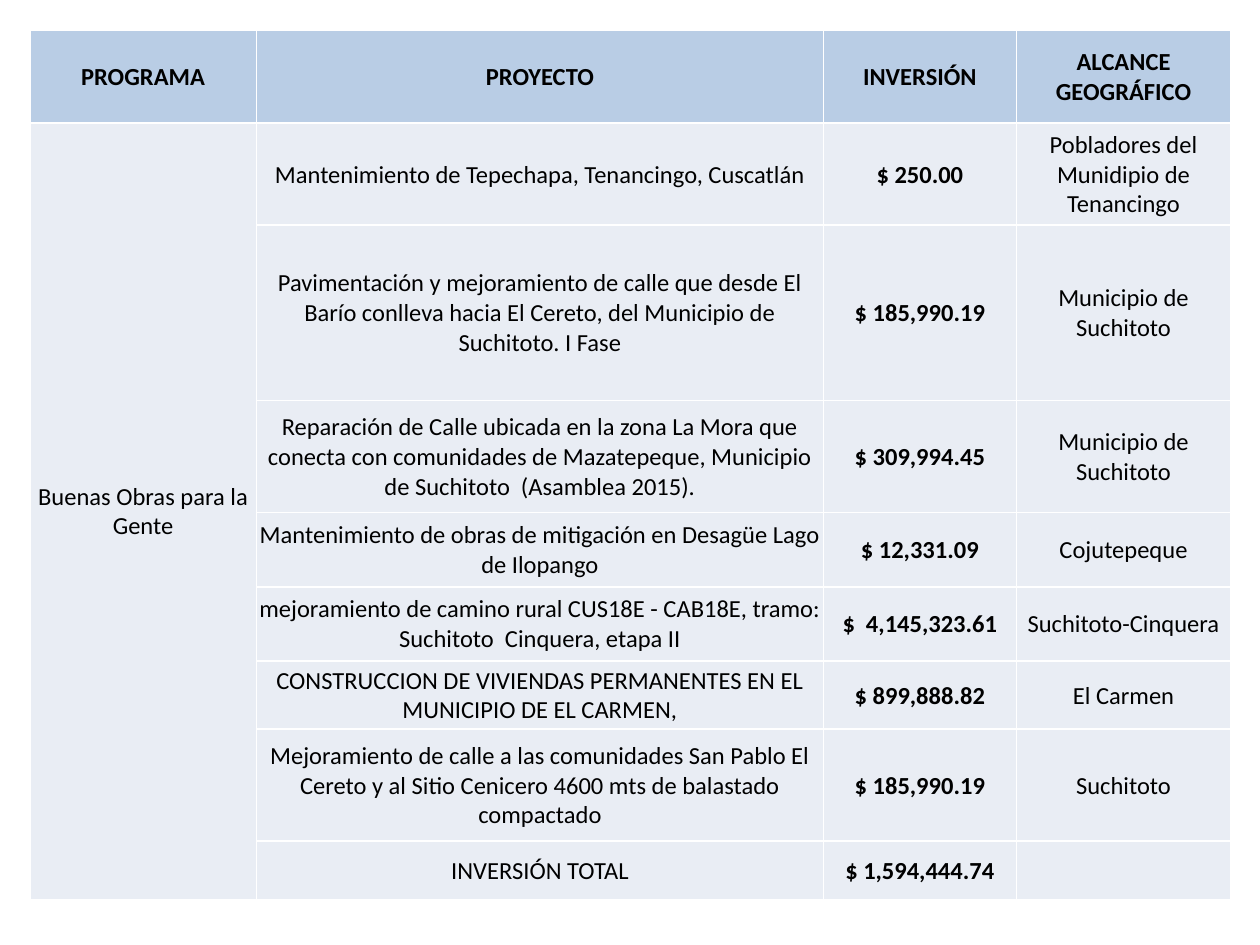
import pptx
import pptx.dml.color
import pptx.enum.text
import pptx.util
from lxml import etree
from pptx.util import Cm

HEADER_BLUE = pptx.dml.color.RGBColor(0xB9, 0xCD, 0xE5)
BODY_GREY = pptx.dml.color.RGBColor(0xE9, 0xED, 0xF4)
BLACK = pptx.dml.color.RGBColor(0, 0, 0)
WHITE = pptx.dml.color.RGBColor(0xFF, 0xFF, 0xFF)
DRAWING_NS = "{http://schemas.openxmlformats.org/drawingml/2006/main}"

HEADINGS = ["PROGRAMA", "PROYECTO", "INVERSIÓN", "ALCANCE GEOGRÁFICO"]
PROGRAM = "Buenas Obras para la Gente"
PROJECTS = [
    ("Mantenimiento de Tepechapa, Tenancingo, Cuscatlán",
     "$ 250.00", "Pobladores del Munidipio de Tenancingo"),
    ("Pavimentación y mejoramiento de calle que desde El Barío conlleva "
     "hacia El Cereto, del Municipio de Suchitoto. I Fase",
     "$ 185,990.19", "Municipio de Suchitoto"),
    ("Reparación de Calle ubicada en la zona La Mora que conecta con "
     "comunidades de Mazatepeque, Municipio de Suchitoto  (Asamblea 2015).",
     "$ 309,994.45", "Municipio de Suchitoto"),
    ("Mantenimiento de obras de mitigación en Desagüe Lago de Ilopango",
     "$ 12,331.09", "Cojutepeque"),
    ("mejoramiento de camino rural CUS18E - CAB18E, tramo: "
     "Suchitoto  Cinquera, etapa II",
     "$  4,145,323.61", "Suchitoto-Cinquera"),
    ("CONSTRUCCION DE VIVIENDAS PERMANENTES EN EL MUNICIPIO DE EL CARMEN,",
     "$ 899,888.82", "El Carmen"),
    ("Mejoramiento de calle a las comunidades San Pablo El Cereto y al "
     "Sitio Cenicero 4600 mts de balastado compactado",
     "$ 185,990.19", "Suchitoto"),
    ("INVERSIÓN TOTAL", "$ 1,594,444.74", ""),
]
COLUMN_WIDTHS = [4.57, 11.43, 3.89, 4.32]
ROW_HEIGHTS = [1.88, 2.06, 3.53, 2.26, 1.5, 1.5, 1.37, 2.26, 1.17]
INVESTMENT_COLUMN = HEADINGS.index("INVERSIÓN")


def add_borders(cell):
    properties = cell._tc.get_or_add_tcPr()
    for side in ("lnL", "lnR", "lnT", "lnB"):
        line = etree.SubElement(properties, DRAWING_NS + side, w=str(pptx.util.Pt(1)))
        fill = etree.SubElement(line, DRAWING_NS + "solidFill")
        etree.SubElement(fill, DRAWING_NS + "srgbClr", val=str(WHITE))


presentation = pptx.Presentation()
presentation.slide_width = Cm(25.4)
presentation.slide_height = Cm(19.05)
slide = presentation.slides.add_slide(presentation.slide_layouts[6])

investments = slide.shapes.add_table(
    len(ROW_HEIGHTS), len(COLUMN_WIDTHS), Cm(0.6), Cm(0.6),
    Cm(sum(COLUMN_WIDTHS)), Cm(sum(ROW_HEIGHTS))).table
investments.first_row = False
investments.horz_banding = False
for column, width in zip(investments.columns, COLUMN_WIDTHS):
    column.width = Cm(width)
for row, height in zip(investments.rows, ROW_HEIGHTS):
    row.height = Cm(height)

contents = [HEADINGS] + [("", *project) for project in PROJECTS]
contents[1] = (PROGRAM, *PROJECTS[0])
for row_number, texts in enumerate(contents):
    is_header = row_number == 0
    for column_number, text in enumerate(texts):
        cell = investments.cell(row_number, column_number)
        add_borders(cell)
        cell.fill.solid()
        cell.fill.fore_color.rgb = HEADER_BLUE if is_header else BODY_GREY
        cell.margin_left = cell.margin_top = cell.margin_right = Cm(0.02)
        cell.margin_bottom = 0
        cell.vertical_anchor = pptx.enum.text.MSO_ANCHOR.MIDDLE
        cell.text = text
        paragraph = cell.text_frame.paragraphs[0]
        paragraph.alignment = pptx.enum.text.PP_ALIGN.CENTER
        paragraph.font.name = "Calibri"
        paragraph.font.size = pptx.util.Pt(14)
        paragraph.font.bold = is_header or column_number == INVESTMENT_COLUMN
        paragraph.font.color.rgb = BLACK

investments.cell(1, 0).merge(investments.cell(len(PROJECTS), 0))

presentation.save("out.pptx")
